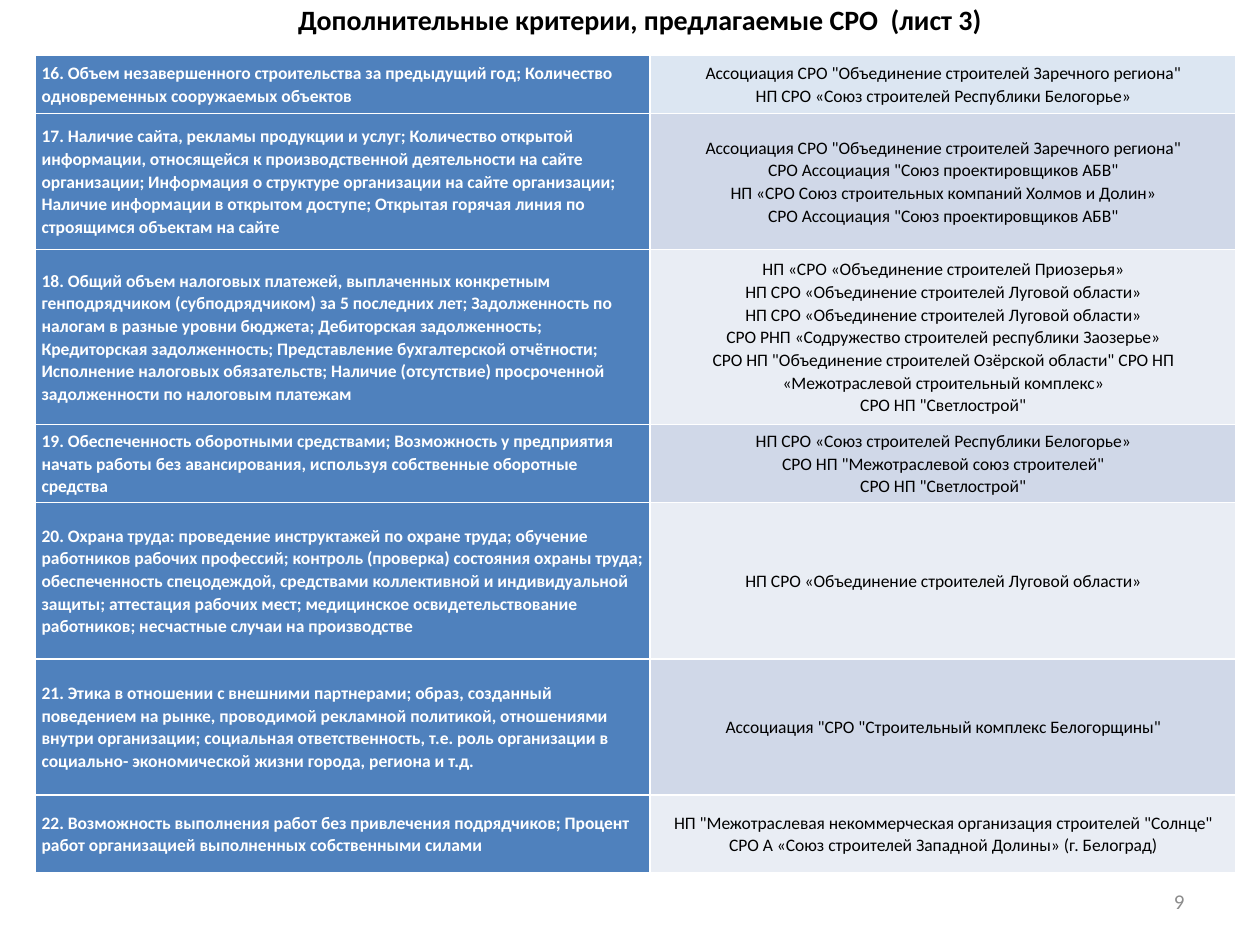
from pptx import Presentation
from pptx.dml.color import RGBColor
from pptx.enum.text import MSO_ANCHOR, PP_ALIGN
from pptx.util import Inches, Pt

WHITE = RGBColor(0xFF, 0xFF, 0xFF)
BLACK = RGBColor(0x00, 0x00, 0x00)
GREY = RGBColor(0x8C, 0x8C, 0x8C)
BLUE = RGBColor(0x4F, 0x81, 0xBD)
FIRST_ROW = RGBColor(0xDC, 0xE6, 0xF2)
BANDS = [RGBColor(0xE9, 0xED, 0xF4), RGBColor(0xD0, 0xD8, 0xE8)]

COLUMN_WIDTHS = [4.88, 4.65]
# Row height, criterion, proposing organisations
CRITERIA = [
    (0.46, "16. Объем незавершенного строительства за предыдущий год; Количество "
           "одновременных сооружаемых объектов",
     ['Ассоциация СРО "Объединение строителей Заречного региона"',
      "НП СРО «Союз строителей Республики Белогорье»"]),
    (1.08, "17. Наличие сайта, рекламы продукции и услуг; Количество открытой "
           "информации, относящейся к производственной деятельности на сайте "
           "организации; Информация о структуре организации на сайте организации; "
           "Наличие информации в открытом доступе; Открытая горячая линия по "
           "строящимся объектам на сайте",
     ['Ассоциация СРО "Объединение строителей Заречного региона"',
      'СРО Ассоциация "Союз проектировщиков АБВ"',
      "НП «СРО Союз строительных компаний Холмов и Долин»",
      'СРО Ассоциация "Союз проектировщиков АБВ"']),
    (1.39, "18. Общий объем налоговых платежей, выплаченных конкретным "
           "генподрядчиком (субподрядчиком) за 5 последних лет; Задолженность по "
           "налогам в разные уровни бюджета; Дебиторская задолженность; "
           "Кредиторская задолженность; Представление бухгалтерской отчётности; "
           "Исполнение налоговых обязательств; Наличие (отсутствие) просроченной "
           "задолженности по налоговым платежам",
     ["НП «СРО «Объединение строителей Приозерья»",
      "НП СРО «Объединение строителей Луговой области»",
      "НП СРО «Объединение строителей Луговой области»",
      "СРО РНП «Содружество строителей республики Заозерье»",
      'СРО НП "Объединение строителей Озёрской области" СРО НП '
      "«Межотраслевой строительный комплекс»",
      'СРО НП "Светлострой"']),
    (0.62, "19. Обеспеченность оборотными средствами; Возможность у предприятия "
           "начать работы без авансирования, используя собственные оборотные "
           "средства",
     ["НП СРО «Союз строителей Республики Белогорье»",
      'СРО НП "Межотраслевой союз строителей"',
      'СРО НП "Светлострой"']),
    (1.24, "20. Охрана труда: проведение инструктажей по охране труда; обучение "
           "работников рабочих профессий; контроль (проверка) состояния охраны "
           "труда; обеспеченность спецодеждой, средствами коллективной и "
           "индивидуальной защиты; аттестация рабочих мест; медицинское "
           "освидетельствование работников; несчастные случаи на производстве",
     ["НП СРО «Объединение строителей Луговой области»"]),
    (1.08, "21. Этика в отношении с внешними партнерами; образ, созданный "
           "поведением на рынке, проводимой рекламной политикой, отношениями "
           "внутри организации; социальная ответственность, т.е. роль организации "
           "в социально- экономической жизни города, региона и т.д.",
     ['Ассоциация "СРО "Строительный комплекс Белогорщины"']),
    (0.62, "22. Возможность выполнения работ без привлечения подрядчиков; Процент "
           "работ организацией выполненных собственными силами",
     ['НП "Межотраслевая некоммерческая организация строителей "Солнце"',
      "СРО А «Союз строителей Западной Долины» (г. Белоград)"]),
]


def write_text(frame, lines, size=10, color=BLACK, bold=False,
               align=PP_ALIGN.LEFT, spacing=1.0, after=0):
    frame.word_wrap = True
    for index, line in enumerate(lines):
        paragraph = frame.add_paragraph() if index else frame.paragraphs[0]
        paragraph.alignment = align
        paragraph.line_spacing = spacing
        paragraph.space_after = Pt(after)
        span = paragraph.add_run()
        span.text = line
        span.font.name = "Calibri"
        span.font.size = Pt(size)
        span.font.bold = bold
        span.font.color.rgb = color


def add_title(page, text):
    title = page.shapes.title
    title.left, title.top = Inches(0.83), Inches(0.02)
    title.width, title.height = Inches(8.5), Inches(0.42)
    frame = title.text_frame
    frame.vertical_anchor = MSO_ANCHOR.TOP
    frame.margin_top = frame.margin_bottom = 0
    write_text(frame, [text], size=16, bold=True, align=PP_ALIGN.CENTER)


def add_page_number(page, number):
    box = page.shapes.add_textbox(Inches(7.17), Inches(6.95), Inches(2.33), Inches(0.4))
    box.text_frame.vertical_anchor = MSO_ANCHOR.MIDDLE
    write_text(box.text_frame, [number], size=12, color=GREY, align=PP_ALIGN.RIGHT)


def fill_cell(cell, lines, fill, **text_format):
    cell.fill.solid()
    cell.fill.fore_color.rgb = fill
    cell.vertical_anchor = MSO_ANCHOR.MIDDLE
    cell.margin_left = cell.margin_right = Inches(0.05)
    cell.margin_top = cell.margin_bottom = 0
    write_text(cell.text_frame, lines, spacing=1.07, **text_format)


def add_criteria_table(page):
    """Add the two-column table; its default style draws the white borders."""
    height = sum(row[0] for row in CRITERIA)
    table = page.shapes.add_table(
        len(CRITERIA), len(COLUMN_WIDTHS), Inches(0.28), Inches(0.44),
        Inches(sum(COLUMN_WIDTHS)), Inches(height)).table
    table.first_col = True
    for column, width in zip(table.columns, COLUMN_WIDTHS):
        column.width = Inches(width)
    for index, (row_height, criterion, organisations) in enumerate(CRITERIA):
        table.rows[index].height = Inches(row_height)
        fill_cell(table.cell(index, 0), [criterion], BLUE,
                  color=WHITE, bold=True, after=6)
        fill_cell(table.cell(index, 1), organisations,
                  BANDS[index % 2] if index else FIRST_ROW,
                  align=PP_ALIGN.CENTER, after=8 if len(organisations) == 1 else 0)


def main():
    deck = Presentation()
    deck.slide_width, deck.slide_height = Inches(10), Inches(7.5)
    page = deck.slides.add_slide(deck.slide_layouts[5])
    add_title(page, "Дополнительные критерии, предлагаемые СРО  (лист 3)")
    add_page_number(page, "9")
    add_criteria_table(page)
    deck.save("out.pptx")


if __name__ == "__main__":
    main()
